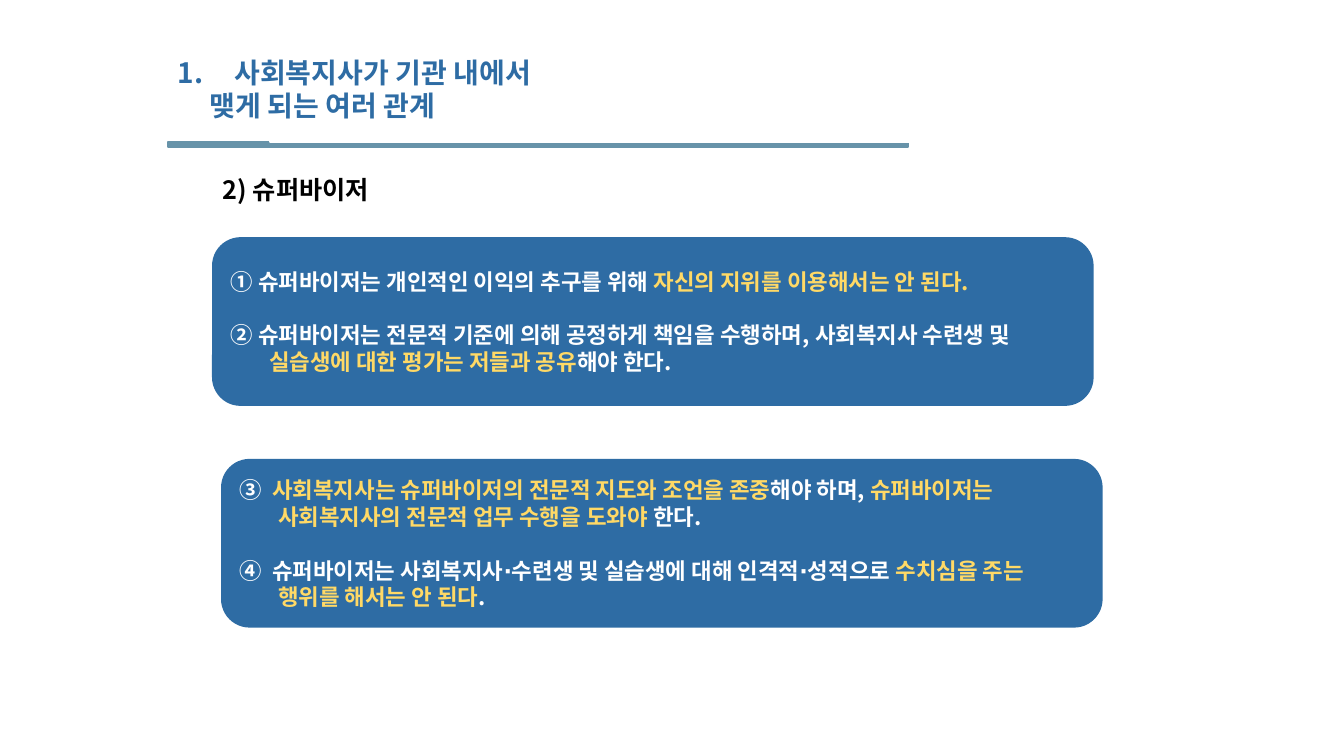
import pptx
import pptx.util
import pptx.dml.color
import pptx.enum.shapes
import pptx.enum.text
import pptx.oxml.ns
import lxml.etree

deck = pptx.Presentation()
deck.slide_width = pptx.util.Inches(13.33)
deck.slide_height = pptx.util.Inches(7.5)
slide = deck.slides.add_slide(deck.slide_layouts[6])
col = deck.slide_width / 100
row = deck.slide_height / 100

FONT = "Noto Sans CJK KR"
BLUE, GOLD, WHITE = "2E6CA4", "FFD966", "FFFFFF"
KIND = pptx.enum.shapes.MSO_SHAPE
FIT = pptx.enum.text.MSO_AUTO_SIZE.SHAPE_TO_FIT_TEXT


def paint(kind, x, y, w, h, fill, line):
    shape = slide.shapes.add_shape(
        kind, int(x * col), int(y * row), int(w * col), int(h * row))
    shape.shadow.inherit = False
    if fill:
        shape.fill.solid()
        shape.fill.fore_color.rgb = pptx.dml.color.RGBColor.from_string(fill)
    else:
        shape.fill.background()
    shape.line.color.rgb = pptx.dml.color.RGBColor.from_string(line)
    shape.line.width = pptx.util.Pt(1)
    return shape


def write(para, parts, size, left, hang):
    para.alignment = pptx.enum.text.PP_ALIGN.LEFT
    props = para._p.get_or_add_pPr()
    props.set("marL", str(int(left * col)))
    props.set("indent", str(int(-hang * col)))
    for text, tint in parts:
        run = para.add_run()
        run.text = text
        run.font.size = pptx.util.Pt(size)
        run.font.bold = True
        run.font.name = FONT
        run.font.color.rgb = pptx.dml.color.RGBColor.from_string(tint)
        east = lxml.etree.SubElement(run.font._element, pptx.oxml.ns.qn("a:ea"))
        east.set("typeface", FONT)


paint(KIND.RECTANGLE, 12.5, 18.8, 55.06, 0.67, "6793A9", "6793A9")
paint(KIND.RECTANGLE, 20.1, 0, 55.06, 18.8, None, WHITE)

title = slide.shapes.add_textbox(
    int(12.5 * col), int(6.67 * row), int(30.23 * col), int(10.27 * row))
frame = title.text_frame
frame.word_wrap = True
frame.auto_size = FIT
head = frame.paragraphs[0]
write(head, [("사회복지사가 기관 내에서", BLUE)], 20, 4.2, 4.2)
mark = lxml.etree.SubElement(
    head._p.get_or_add_pPr(), pptx.oxml.ns.qn("a:buAutoNum"))
mark.set("type", "arabicPeriod")
write(frame.add_paragraph(), [("맺게 되는 여러 관계", BLUE)], 20, 2.35, 0)

cards = [
    (15.83, 31.47, [
        [("① 슈퍼바이저는 개인적인 이익의 추구를 위해 ", WHITE),
         ("자신의 지위를 이용해서는 안 된다.", GOLD)],
        [("② 슈퍼바이저는 전문적 기준에 의해 공정하게 책임을 수행하며, 사회복지사 수련생 및 ", WHITE),
         ("실습생에 대한 평가는 저들과 공유", GOLD),
         ("해야 한다.", WHITE)],
    ]),
    (16.5, 60.8, [
        [("③  ", WHITE),
         ("사회복지사는 슈퍼바이저의 전문적 지도와 조언을 존중", GOLD),
         ("해야 하며, ", WHITE),
         ("슈퍼바이저는 사회복지사의 전문적 업무 수행을 도와야 ", GOLD),
         ("한다.", WHITE)],
        [("④  슈퍼바이저는 사회복지사∙수련생 및 실습생에 대해 인격적∙성적으로 ", WHITE),
         ("수치심을 주는 행위를 해서는 안 된다", GOLD),
         (".", WHITE)],
    ]),
]
for x, y, rules in cards:
    card = paint(KIND.ROUNDED_RECTANGLE, x, y, 65.49, 22.13, BLUE, BLUE)
    frame = card.text_frame
    frame.word_wrap = True
    frame.vertical_anchor = pptx.enum.text.MSO_ANCHOR.MIDDLE
    for i, parts in enumerate(rules):
        para = frame.add_paragraph() if i else frame.paragraphs[0]
        write(para, parts, 16, 2.85, 2.85)
        if i:
            para.space_before = pptx.util.Pt(19.3)

topic = slide.shapes.add_textbox(
    int(15.83 * col), int(22.4 * row), int(13.43 * col), int(5.33 * row))
topic.text_frame.word_wrap = False
topic.text_frame.auto_size = FIT
write(topic.text_frame.paragraphs[0], [("2) 슈퍼바이저", "000000")], 18, 2.85, 2.85)

deck.save("out.pptx")
